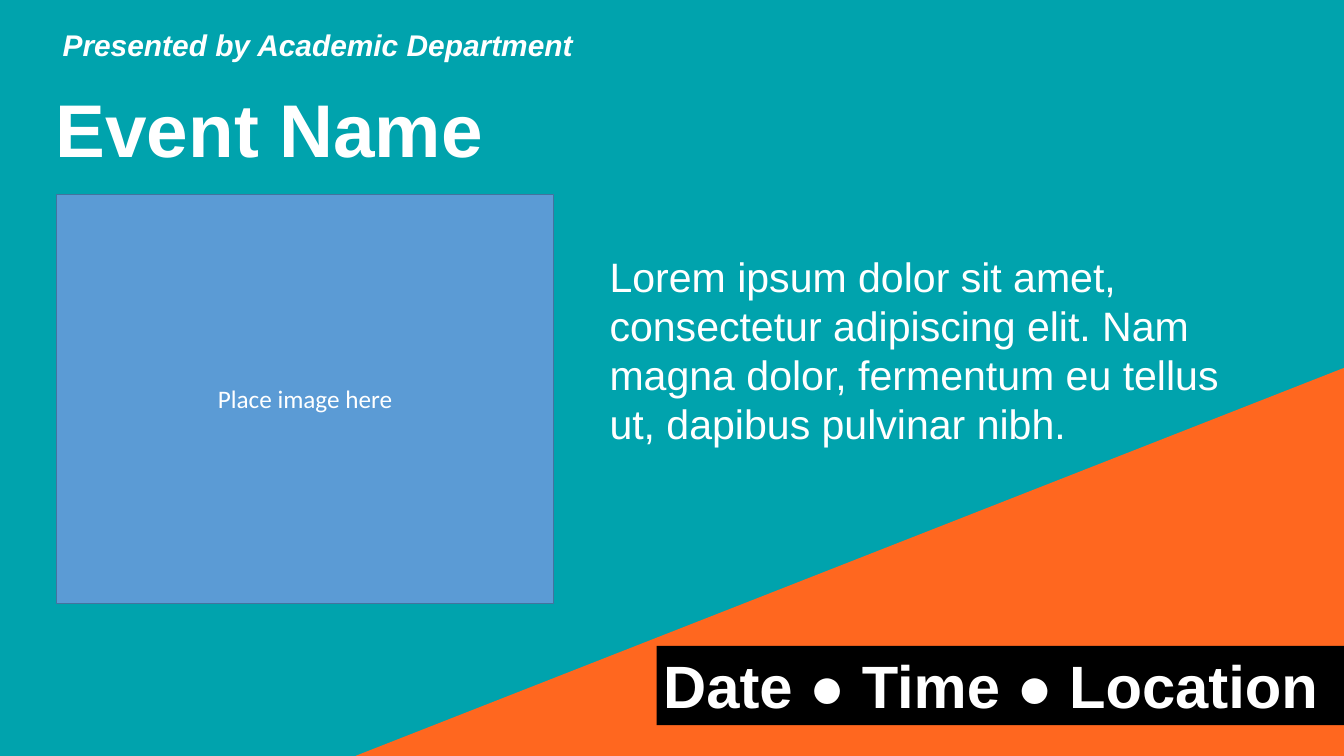
from pptx import Presentation
from pptx.dml.color import RGBColor
from pptx.enum import shapes, text
from pptx.util import Pt

COLORS = {
    "teal": "00A3AD",
    "orange": "FF671F",
    "blue": "5B9BD5",
    "blue_edge": "43739E",
    "black": "000000",
    "white": "FFFFFF",
}


def add_block(kind, left, top, width, height, color):
    """Add a flat filled shape without outline or shadow."""
    block = slide.shapes.add_shape(kind, Pt(left), Pt(top), Pt(width), Pt(height))
    block.shadow.inherit = False
    block.fill.solid()
    block.fill.fore_color.rgb = RGBColor.from_string(COLORS[color])
    block.line.fill.background()
    return block


def write(holder, words, size, name="Arial", bold=False, italic=False,
          align=text.PP_ALIGN.LEFT, anchor=text.MSO_ANCHOR.TOP):
    """Put one white paragraph into a shape, text box or placeholder."""
    frame = holder.text_frame
    frame.text = words
    frame.word_wrap = True
    frame.auto_size = text.MSO_AUTO_SIZE.NONE
    frame.vertical_anchor = anchor
    paragraph = frame.paragraphs[0]
    paragraph.alignment = align
    font = paragraph.font
    font.name, font.size, font.bold, font.italic = name, Pt(size), bold, italic
    font.color.rgb = RGBColor.from_string(COLORS["white"])


prs = Presentation()
prs.slide_width, prs.slide_height = Pt(1440), Pt(810)
slide = prs.slides.add_slide(prs.slide_layouts[5])
slide.background.fill.solid()
slide.background.fill.fore_color.rgb = RGBColor.from_string(COLORS["teal"])

# Event name
title = slide.shapes.title
title.left, title.top, title.width, title.height = Pt(52.5), Pt(85), Pt(1566.5), Pt(104.5)
write(title, "Event Name", 80, bold=True)

# Orange corner, turned so that its right angle sits at the bottom right
corner = add_block(shapes.MSO_SHAPE.RIGHT_TRIANGLE, 702.75, 72.75, 415.5, 1058.5, "orange")
corner.rotation = 270

# Space for an image
image_area = add_block(shapes.MSO_SHAPE.RECTANGLE, 60, 208, 533.5, 438.5, "blue")
image_area.line.color.rgb = RGBColor.from_string(COLORS["blue_edge"])
image_area.line.width = Pt(1)
write(image_area, "Place image here", 27, name="Calibri",
      align=text.PP_ALIGN.CENTER, anchor=text.MSO_ANCHOR.MIDDLE)

# Description and presenter
description = slide.shapes.add_textbox(Pt(646), Pt(265.5), Pt(674.5), Pt(220.5))
write(description, "Lorem ipsum dolor sit amet, consectetur adipiscing elit. "
      "Nam magna dolor, fermentum eu tellus ut, dapibus pulvinar nibh.", 44)

presenter = slide.shapes.add_textbox(Pt(60), Pt(24.5), Pt(1566.5), Pt(85))
write(presenter, "Presented by Academic Department", 32, bold=True, italic=True)

# Date, time and location
details_bar = add_block(shapes.MSO_SHAPE.RECTANGLE, 703.5, 692, 736.5, 85, "black")
write(details_bar, "Date ● Time ● Location", 64, bold=True)

prs.save("out.pptx")
